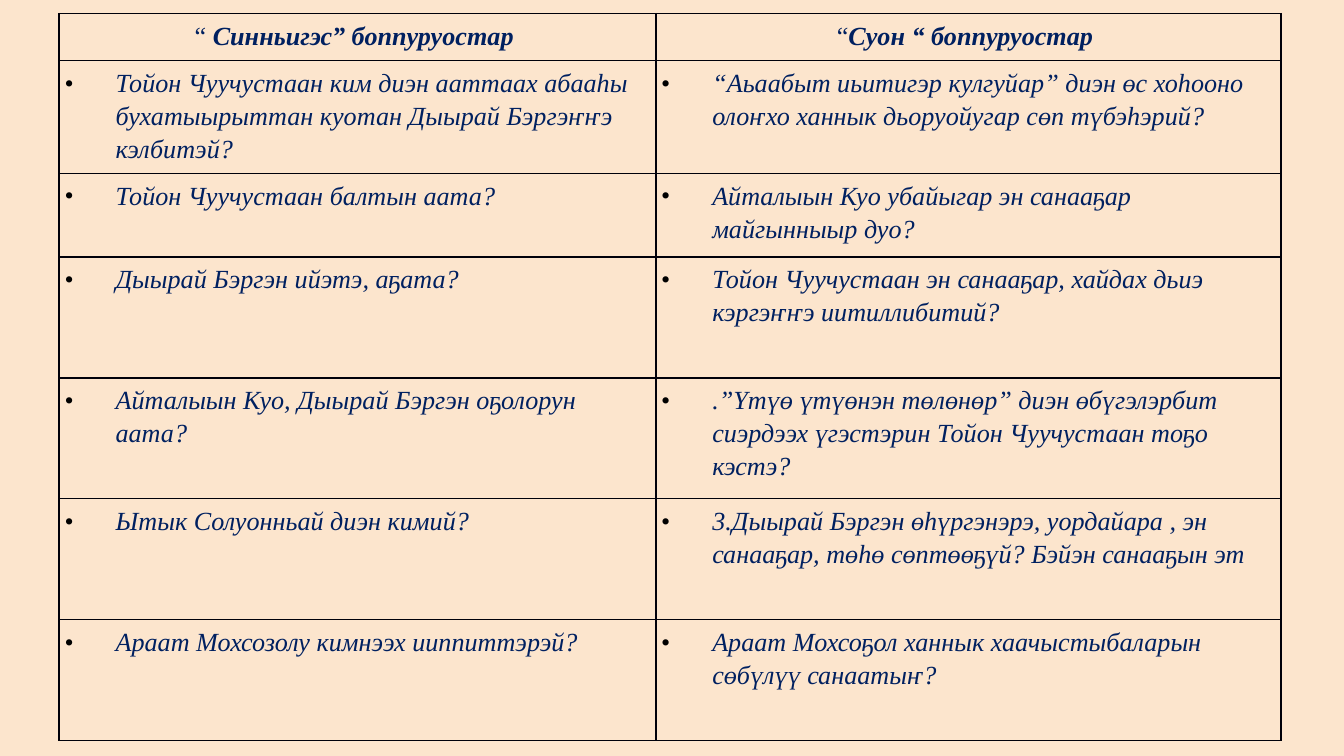
import pptx
import pptx.dml.color
import pptx.enum.text
import pptx.oxml
import pptx.oxml.ns
import pptx.util

COLORS = {"paper": "FCE5CD", "ink": "002060", "rule": "00000A", "bullet": "000000"}
NS = pptx.oxml.ns.nsdecls("a")

HEADINGS = [
    ("“ ", "Синньигэс” боппуруостар "),
    ("“", "Суон “ боппуруостар "),
]
QUESTIONS = [
    ("Тойон Чуучустаан ким диэн ааттаах абааһы бухатыырыттан куотан Дыырай Бэргэҥҥэ кэлбитэй?",
     "“Аьаабыт иьитигэр кулгуйар” диэн өс хоһооно олоҥхо ханнык дьоруойугар сөп түбэһэрий?"),
    ("Тойон Чуучустаан балтын аата?",
     "Айталыын Куо убайыгар эн санааҕар майгынныыр дуо?"),
    ("Дыырай Бэргэн ийэтэ, аҕата?",
     "Тойон Чуучустаан эн санааҕар, хайдах дьиэ кэргэҥҥэ иитиллибитий?"),
    ("Айталыын Куо, Дыырай Бэргэн оҕолорун аата?",
     ".”Үтүө үтүөнэн төлөнөр” диэн өбүгэлэрбит сиэрдээх үгэстэрин Тойон Чуучустаан тоҕо кэстэ?"),
    ("Ытык Солуонньай диэн кимий?",
     "3.Дыырай Бэргэн өһүргэнэрэ, уордайара , эн санааҕар, төһө сөптөөҕүй? Бэйэн санааҕын эт"),
    ("Араат Мохсозолу кимнээх ииппиттэрэй?",
     "Араат Мохсоҕол ханнык хаачыстыбаларын сөбүлүү санаатыҥ?"),
]
COLUMN_WIDTHS = [4.44, 4.65]
ROW_HEIGHTS = [0.35, 0.84, 0.62] + [0.9] * 4


class QuestionSlide:
    font_name = "Times New Roman"
    font_size = pptx.util.Pt(14)
    line_spacing = 1.15
    indent = pptx.util.Inches(0.38)

    def __init__(self, deck):
        self.deck = deck
        self.page = deck.slides.add_slide(deck.slide_layouts[6])
        fill = self.page.background.fill
        fill.solid()
        fill.fore_color.rgb = self.color("paper")

    def color(self, name):
        return pptx.dml.color.RGBColor.from_string(COLORS[name])

    def table(self, left, top, width, height, column_widths, row_heights):
        """Add an empty ruled table; its frame is given in shares of the slide's size."""
        frame = self.page.shapes.add_table(
            len(row_heights), len(column_widths),
            int(self.deck.slide_width * left), int(self.deck.slide_height * top),
            int(self.deck.slide_width * width), int(self.deck.slide_height * height))
        table = frame.table
        table.first_row = table.horz_banding = False
        for column, inches in zip(table.columns, column_widths):
            column.width = pptx.util.Inches(inches)
        for row, inches in zip(table.rows, row_heights):
            row.height = pptx.util.Inches(inches)
        frame.width = int(self.deck.slide_width * width)
        frame.height = int(self.deck.slide_height * height)
        for cell in table.iter_cells():
            self.frame_cell(cell)
        return table

    def frame_cell(self, cell):
        cell.margin_left = cell.margin_right = pptx.util.Inches(0.04)
        cell.margin_top = cell.margin_bottom = pptx.util.Inches(0.03)
        cell.fill.background()
        properties = cell._tc.get_or_add_tcPr()
        for position, side in enumerate("LRTB"):
            properties.insert(position, pptx.oxml.parse_xml(
                f'<a:ln{side} {NS} w="{pptx.util.Pt(1)}"><a:solidFill>'
                f'<a:srgbClr val="{COLORS["rule"]}"/></a:solidFill></a:ln{side}>'))

    def style(self, para):
        para.line_spacing = self.line_spacing
        para.font.name = self.font_name
        para.font.size = self.font_size
        para.font.color.rgb = self.color("ink")

    def heading(self, cell, opening, words):
        """Write a centred heading whose opening quote is upright and light."""
        para = cell.text_frame.paragraphs[0]
        para.alignment = pptx.enum.text.PP_ALIGN.CENTER
        self.style(para)
        para.add_run().text = opening
        span = para.add_run()
        span.text = words
        span.font.bold = span.font.italic = True

    def question(self, cell, words):
        para = cell.text_frame.paragraphs[0]
        para.text = words
        para.line_spacing = self.line_spacing
        properties = para._p.get_or_add_pPr()
        properties.set("marL", str(self.indent))
        properties.set("indent", str(-self.indent))
        for bullet in (f'<a:buClr {NS}><a:srgbClr val="{COLORS["bullet"]}"/></a:buClr>',
                       f'<a:buSzPts {NS} val="{self.font_size.centipoints}"/>',
                       f'<a:buFont {NS} typeface="{self.font_name}"/>',
                       f'<a:buChar {NS} char="•"/>'):
            properties.append(pptx.oxml.parse_xml(bullet))
        self.style(para)
        para.font.italic = True


def main():
    deck = pptx.Presentation()
    deck.slide_width = pptx.util.Inches(10)
    deck.slide_height = deck.slide_width * 9 // 16
    slide = QuestionSlide(deck)
    table = slide.table(0.044, 0.018, 0.91, 0.967, COLUMN_WIDTHS, ROW_HEIGHTS)
    for column, (opening, words) in enumerate(HEADINGS):
        slide.heading(table.cell(0, column), opening, words)
    for row, pair in enumerate(QUESTIONS, start=1):
        for column, words in enumerate(pair):
            slide.question(table.cell(row, column), words)
    deck.save("out.pptx")


if __name__ == "__main__":
    main()
